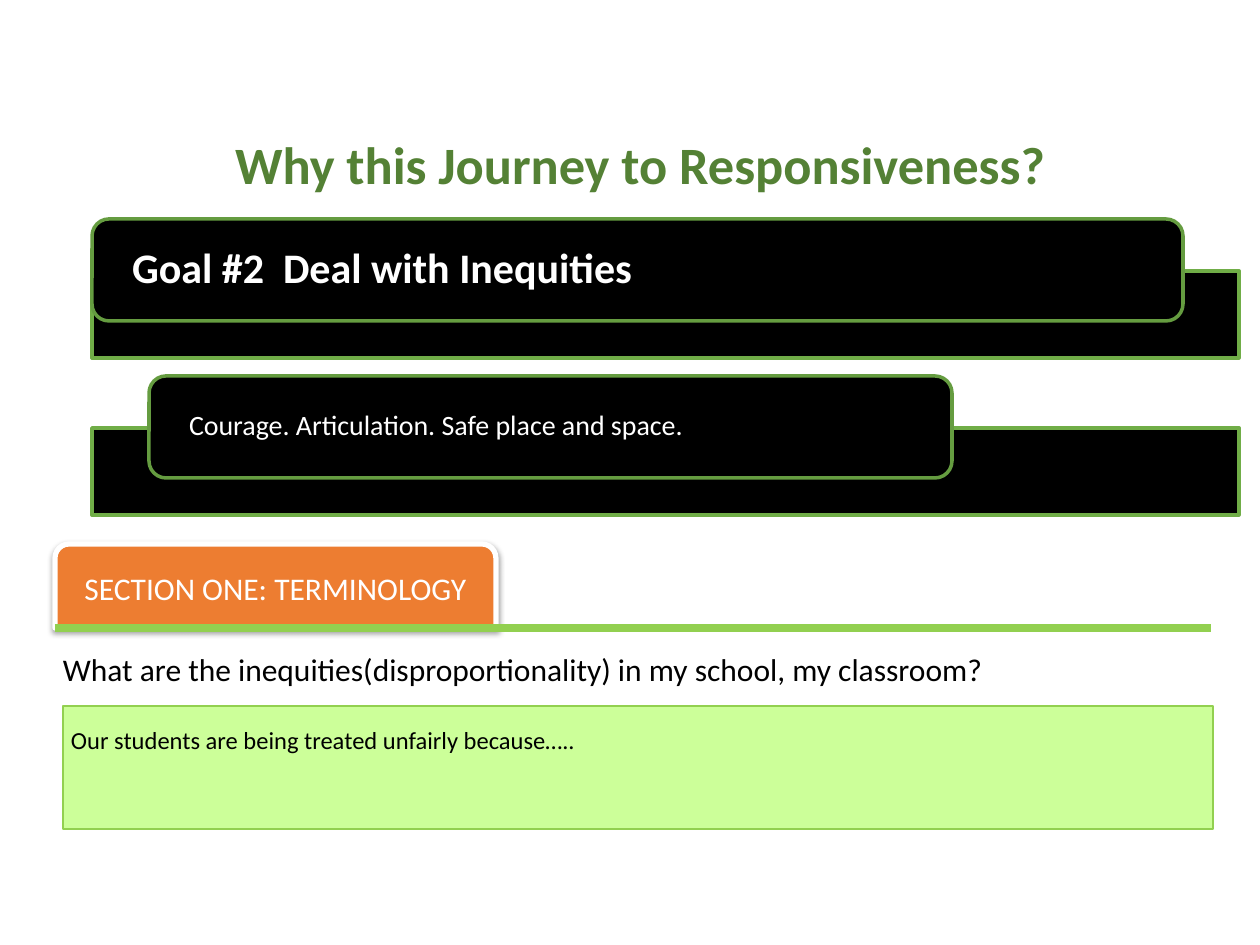
"""Build the slide on dealing with inequities."""
import dataclasses
import typing

import lxml.etree
import pptx
import pptx.dml.color
import pptx.enum.shapes
import pptx.enum.text
import pptx.oxml
import pptx.oxml.ns
import pptx.util

RGB = pptx.dml.color.RGBColor
SHAPE = pptx.enum.shapes.MSO_SHAPE
ALIGN = pptx.enum.text.PP_ALIGN
ANCHOR = pptx.enum.text.MSO_ANCHOR

BLACK = RGB(0x00, 0x00, 0x00)
WHITE = RGB(0xFF, 0xFF, 0xFF)
TITLE_GREEN = RGB(0x54, 0x81, 0x35)
BAR_GREEN = RGB(0x70, 0xAD, 0x47)
GOAL_GREEN = RGB(0x65, 0x9C, 0x40)
LIME = RGB(0x92, 0xD0, 0x50)
PALE_LIME = RGB(0xCC, 0xFF, 0x99)
ORANGE = RGB(0xED, 0x7D, 0x31)

FONT = "Calibri"
PX = 914400 / 126
BAR_LEFT, BAR_WIDTH, BAR_HEIGHT = 92, 1147, 87
GOAL_TOP, GOAL_HEIGHT, GOAL_PITCH, BAR_DROP = 219, 102, 157, 52


@dataclasses.dataclass(frozen=True)
class Box:
    left: int
    top: int
    width: int
    height: int


@dataclasses.dataclass(frozen=True)
class Text:
    words: str
    size: int
    color: RGB
    bold: bool = False
    align: ALIGN = ALIGN.LEFT
    anchor: ANCHOR = ANCHOR.MIDDLE
    spacing: float = 1.0
    inset_x: int = 13
    inset_y: int = 6


@dataclasses.dataclass(frozen=True)
class Goal:
    left: int
    width: int
    words: str
    size: int
    bold: bool


GOALS = (
    Goal(92, 1091, "Goal #2  Deal with Inequities", 24, True),
    Goal(149, 803, "Courage. Articulation. Safe place and space.", 16, False),
)


def px(n: int) -> int:
    """Turn pixels into EMU."""
    return pptx.util.Emu(round(n * PX))


def frame(box: Box) -> tuple[int, ...]:
    """Give the EMU left, top, width and height of a box."""
    return tuple(px(n) for n in dataclasses.astuple(box))


def write(s: typing.Any, text: Text) -> None:
    """Put formatted text into a shape."""
    tf = s.text_frame
    tf.word_wrap = True
    tf.auto_size = pptx.enum.text.MSO_AUTO_SIZE.NONE
    tf.vertical_anchor = text.anchor
    tf.margin_left = tf.margin_right = px(text.inset_x)
    tf.margin_top = tf.margin_bottom = px(text.inset_y)
    p = tf.paragraphs[0]
    p.text = text.words
    p.alignment = text.align
    p.line_spacing = text.spacing
    p.space_before = pptx.util.Pt(0)
    p.font.name = FONT
    p.font.size = pptx.util.Pt(text.size)
    p.font.bold = text.bold
    p.font.color.rgb = text.color


def add_panel(slide: typing.Any, kind: SHAPE, box: Box, fill: RGB, line: RGB,
              weight: float, text: Text | None = None) -> typing.Any:
    """Add a filled, outlined shape with optional text."""
    s = slide.shapes.add_shape(kind, *frame(box))
    s.shadow.inherit = False
    s.fill.solid()
    s.fill.fore_color.rgb = fill
    s.line.color.rgb = line
    s.line.width = pptx.util.Pt(weight)
    if text:
        write(s, text)
    return s


def add_goal(slide: typing.Any, goal: Goal, top: int) -> None:
    """Add a goal heading over its bar."""
    bar = Box(BAR_LEFT, top + BAR_DROP, BAR_WIDTH, BAR_HEIGHT)
    add_panel(slide, SHAPE.RECTANGLE, bar, BLACK, BAR_GREEN, 2)
    text = Text(goal.words, goal.size, WHITE, goal.bold, spacing=0.9, inset_x=35)
    add_panel(slide, SHAPE.ROUNDED_RECTANGLE,
              Box(goal.left, top, goal.width, GOAL_HEIGHT),
              BLACK, GOAL_GREEN, 2, text)


def add_shadow(s: typing.Any) -> None:
    """Give a shape a soft shadow straight below it."""
    effects = s._element.spPr.find(pptx.oxml.ns.qn("a:effectLst"))
    effects.append(pptx.oxml.parse_xml(
        f'<a:outerShdw {pptx.oxml.ns.nsdecls("a")} blurRad="39370" dist="20320" '
        'dir="5400000" rotWithShape="0"><a:srgbClr val="000000">'
        '<a:alpha val="37000"/></a:srgbClr></a:outerShdw>'))


def add_rule(slide: typing.Any, left: int, right: int, y: int) -> None:
    """Add the thick line under the section tab."""
    s = slide.shapes.add_connector(pptx.enum.shapes.MSO_CONNECTOR.STRAIGHT,
                                   px(left), px(y), px(right), px(y))
    s.line.color.rgb = LIME
    s.line.width = pptx.util.Pt(4.5)
    lxml.etree.SubElement(s._element.spPr, pptx.oxml.ns.qn("a:effectLst"))


def main() -> None:
    """Build and save the slide."""
    prs = pptx.Presentation()
    prs.slide_width, prs.slide_height = px(1260), px(945)
    slide = prs.slides.add_slide(prs.slide_layouts[5])

    title = slide.shapes.title
    title.left, title.top, title.width, title.height = frame(Box(0, 123, 1281, 90))
    write(title, Text("Why this Journey to Responsiveness?", 30, TITLE_GREEN, True,
                      ALIGN.CENTER, spacing=0.9))

    for i, goal in enumerate(GOALS):
        add_goal(slide, goal, GOAL_TOP + i * GOAL_PITCH)

    tab = add_panel(slide, SHAPE.ROUND_2_SAME_RECTANGLE, Box(55, 544, 441, 84),
                    ORANGE, WHITE, 3,
                    Text("SECTION ONE: TERMINOLOGY", 18, WHITE, align=ALIGN.CENTER))
    add_shadow(tab)

    add_panel(slide, SHAPE.RECTANGLE, Box(63, 706, 1150, 123), PALE_LIME, LIME, 0.75,
              Text("Our students are being treated unfairly because…..", 14, BLACK,
                   anchor=ANCHOR.TOP, spacing=1.5, inset_x=8, inset_y=4))

    question = slide.shapes.add_textbox(*frame(Box(50, 644, 1149, 50)))
    write(question, Text("What are the inequities(disproportionality) in my school, "
                         "my classroom?", 18, BLACK, anchor=ANCHOR.TOP))
    add_rule(slide, 55, 1211, 628)

    prs.save("out.pptx")


if __name__ == "__main__":
    main()
